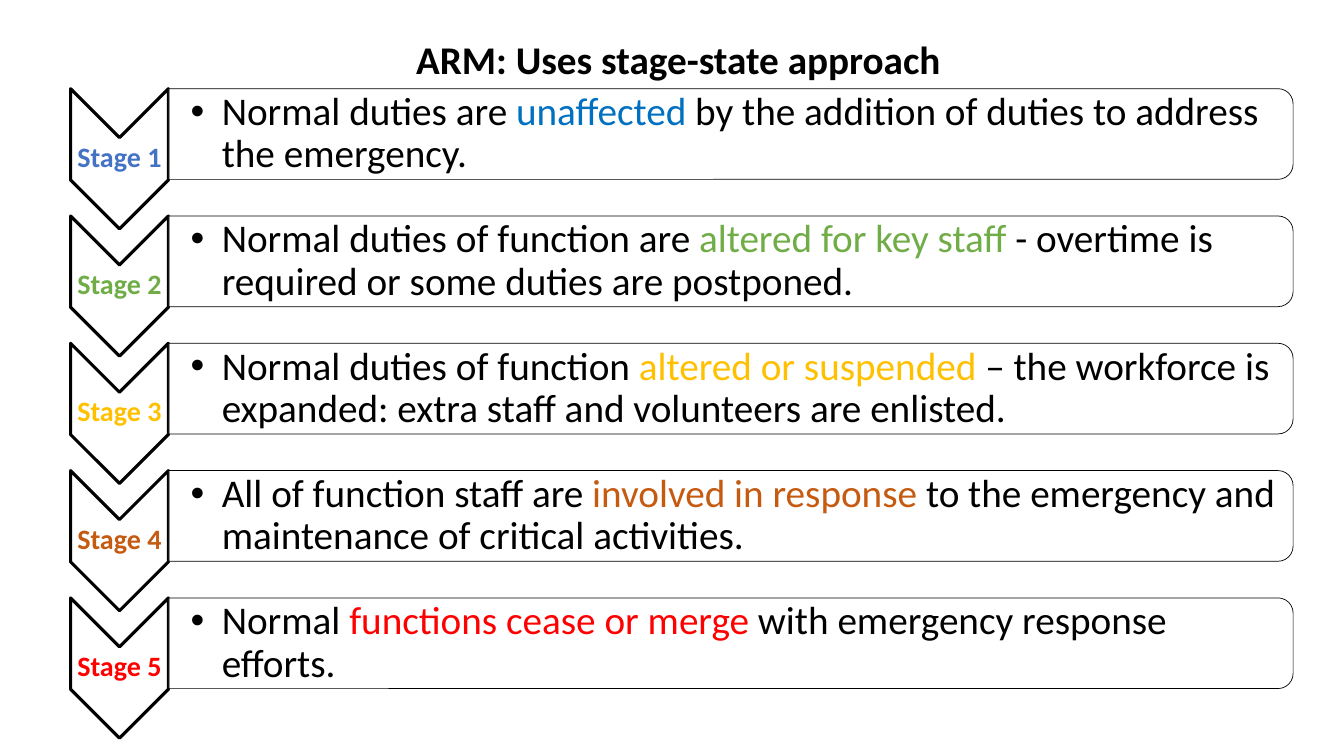
import pptx
import pptx.dml.color
import pptx.enum.shapes
import pptx.enum.text
import pptx.oxml.ns
import pptx.util
from lxml import etree

Inches = pptx.util.Inches
Pt = pptx.util.Pt
RGBColor = pptx.dml.color.RGBColor
MSO_SHAPE = pptx.enum.shapes.MSO_SHAPE
PP_ALIGN = pptx.enum.text.PP_ALIGN
MSO_ANCHOR = pptx.enum.text.MSO_ANCHOR
qn = pptx.oxml.ns.qn

BLACK = RGBColor(0x00, 0x00, 0x00)
WHITE = RGBColor(0xFF, 0xFF, 0xFF)
BLUE = RGBColor(0x44, 0x72, 0xC4)
BRIGHT_BLUE = RGBColor(0x00, 0x70, 0xC0)
GREEN = RGBColor(0x70, 0xAD, 0x47)
GOLD = RGBColor(0xFF, 0xC0, 0x00)
ORANGE = RGBColor(0xC5, 0x5A, 0x11)
RED = RGBColor(0xFF, 0x00, 0x00)

FIRST_MIDDLE = 1.33
PITCH = 1.263

# label colour, highlight colour, text before, highlighted text, text after
STAGES = [
    (BLUE, BRIGHT_BLUE, "Normal duties are ", "unaffected",
     " by the addition of duties to address the emergency."),
    (GREEN, GREEN, "Normal duties of function are ", "altered for key staff ",
     "- overtime is required or some duties are postponed."),
    (GOLD, GOLD, "Normal duties of function ", "altered or suspended ",
     "– the workforce is expanded: extra staff and volunteers are enlisted."),
    (ORANGE, ORANGE, "All of function staff are ", "involved in response ",
     "to the emergency and maintenance of critical activities."),
    (RED, RED, "Normal ", "functions cease or merge",
     " with emergency response efforts."),
]


def add_run(p, text, size=28, color=BLACK, bold=False, font="Calibri"):
    r = p.add_run()
    r.text = text
    r.font.name = font
    r.font.size = Pt(size)
    r.font.bold = bold
    r.font.color.rgb = color


def add_bullet(p, indent):
    """Give the paragraph a round bullet with a hanging indent."""
    pPr = p._p.get_or_add_pPr()
    pPr.set("marL", str(Inches(indent)))
    pPr.set("indent", str(-Inches(indent)))
    etree.SubElement(pPr, qn("a:buFont"), typeface="Arial")
    etree.SubElement(pPr, qn("a:buChar"), char="•")


class StageSlide:
    def __init__(self, prs):
        self.shapes = prs.slides.add_slide(prs.slide_layouts[6]).shapes

    def turned_shape(self, kind, center_x, center_y, width, height, line_width):
        """Add a preset shape turned a quarter clockwise about its centre."""
        sp = self.shapes.add_shape(
            kind, Inches(center_x - width / 2), Inches(center_y - height / 2),
            Inches(width), Inches(height))
        sp.rotation = 90
        sp.shadow.inherit = False
        sp.fill.background()
        sp.line.color.rgb = BLACK
        sp.line.width = Pt(line_width)
        return sp

    def text(self, left, top, width, height, margin=0.02, left_margin=None):
        """Add a wrapped, vertically centred box and return its paragraph."""
        tf = self.shapes.add_textbox(
            Inches(left), Inches(top), Inches(width), Inches(height)).text_frame
        tf.word_wrap = True
        tf.vertical_anchor = MSO_ANCHOR.MIDDLE
        tf.margin_top = tf.margin_right = tf.margin_bottom = Inches(margin)
        tf.margin_left = Inches(margin if left_margin is None else left_margin)
        p = tf.paragraphs[0]
        p.line_spacing = 0.9
        return p

    def title(self, text):
        tf = self.shapes.add_textbox(
            Inches(4.03), Inches(0.3), Inches(5.47), Inches(0.57)).text_frame
        tf.word_wrap = False
        tf.auto_size = pptx.enum.text.MSO_AUTO_SIZE.SHAPE_TO_FIT_TEXT
        add_run(tf.paragraphs[0], text, bold=True)

    def chevron(self, middle, label, color):
        self.turned_shape(MSO_SHAPE.CHEVRON, 1.185, middle + 0.245, 1.39, 0.97, 2.25)
        p = self.text(0.7, middle + 0.03, 0.97, 0.42, margin=0.01)
        p.alignment = PP_ALIGN.CENTER
        add_run(p, label, size=20, color=color, bold=True)

    def description(self, middle, before, highlight, after, color):
        panel = self.turned_shape(
            MSO_SHAPE.ROUND_2_SAME_RECTANGLE, 7.25, middle, 0.9, 11.15, 0.5)
        panel.fill.solid()
        panel.fill.fore_color.rgb = WHITE
        fill_color = panel._element.spPr.find(qn("a:solidFill"))[0]
        etree.SubElement(fill_color, qn("a:alpha"), val="90000")
        p = self.text(1.67, middle - 0.41, 11.11, 0.82, left_margin=0.22)
        add_bullet(p, 0.31)
        add_run(p, before)
        add_run(p, highlight, color=color)
        add_run(p, after)


def main():
    prs = pptx.Presentation()
    prs.slide_width = Inches(13.33)
    prs.slide_height = Inches(7.5)
    slide = StageSlide(prs)
    for i, (label_color, color, before, highlight, after) in enumerate(STAGES):
        middle = FIRST_MIDDLE + i * PITCH
        slide.chevron(middle, f"Stage {i + 1}", label_color)
        slide.description(middle, before, highlight, after, color)
    slide.title("ARM: Uses stage-state approach")
    prs.save("out.pptx")


if __name__ == "__main__":
    main()
